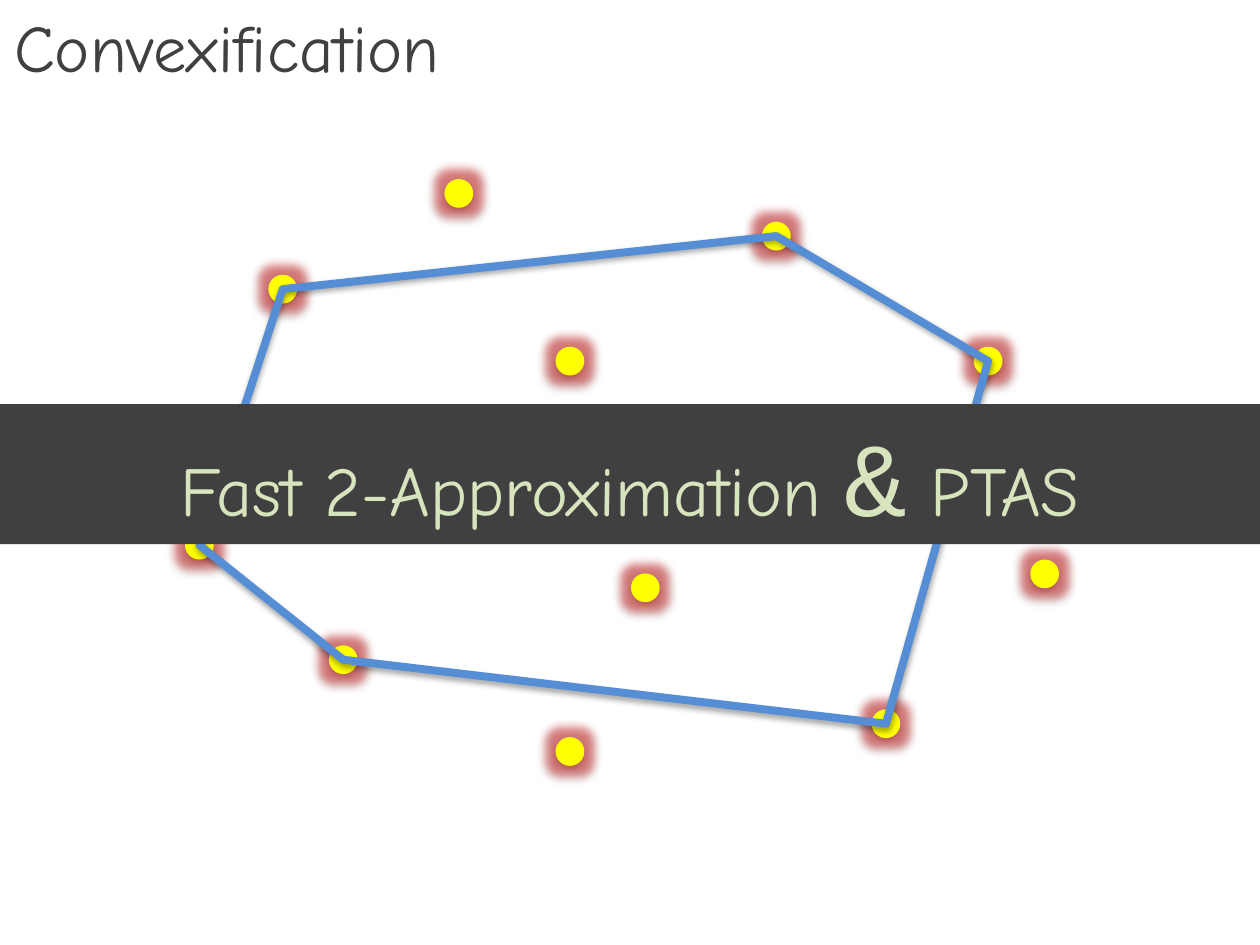
from lxml import etree
from pptx import Presentation
from pptx.dml.color import RGBColor
from pptx.enum.shapes import MSO_SHAPE
from pptx.enum.text import MSO_ANCHOR, MSO_AUTO_SIZE, PP_ALIGN
from pptx.oxml.ns import qn
from pptx.util import Cm, Pt

OVAL, RECTANGLE = MSO_SHAPE.OVAL, MSO_SHAPE.RECTANGLE
TOP, MIDDLE = MSO_ANCHOR.TOP, MSO_ANCHOR.MIDDLE
LEFT, CENTER = PP_ALIGN.LEFT, PP_ALIGN.CENTER
GROW = MSO_AUTO_SIZE.SHAPE_TO_FIT_TEXT
TITLE_ONLY = 5

FONT = "Comic Neue"
DOT_SIZE = 0.58
HULL_DOTS = [(0, 7.09), (1.68, 1.93), (11.63, 0.86),
             (15.9, 3.38), (13.84, 10.69), (2.9, 9.4)]
OTHER_DOTS = [(5.23, 0), (17.04, 7.67), (8.99, 7.95), (7.47, 11.25), (7.47, 3.38),
              (12.22, 4.95), (3.45, 5.54), (5.66, 5.54), (10.26, 5.54)]


def colour(hex_text):
    """Return the colour for a hex string."""
    return RGBColor.from_string(hex_text)


def add_effect(shape, name, hex_text, opacity, **settings):
    """Append a coloured effect to the shape's effect list."""
    effects = shape._element.spPr.find(qn("a:effectLst"))
    effect = etree.SubElement(effects, qn(f"a:{name}"),
                              {key: str(value) for key, value in settings.items()})
    tint = etree.SubElement(effect, qn("a:srgbClr"), val=hex_text)
    etree.SubElement(tint, qn("a:alpha"), val=str(opacity * 1000))


def add_drop_shadow(shape):
    """Give the shape a soft shadow straight below it."""
    add_effect(shape, "outerShdw", "000000", 35, blurRad=Pt(3.1), dist=Pt(1.8),
               dir=90 * 60000, rotWithShape=0)


def set_title(page, left, top, width, height):
    """Place and format the slide title."""
    title = page.shapes.title
    title.left, title.top, title.width, title.height = map(Cm, (left, top, width, height))
    frame = title.text_frame
    frame.text = "Convexification"
    frame.word_wrap = False
    frame.auto_size = GROW
    frame.vertical_anchor = TOP
    para = frame.paragraphs[0]
    para.alignment = LEFT
    para.font.name, para.font.size = FONT, Pt(38)
    para.font.color.rgb = colour("404040")


def add_dot(page, left, top):
    """Draw one glowing point."""
    dot = page.shapes.add_shape(OVAL, Cm(left), Cm(top), Cm(DOT_SIZE), Cm(DOT_SIZE))
    dot.shadow.inherit = False
    dot.fill.solid()
    dot.fill.fore_color.rgb = colour("FFFF00")
    dot.line.fill.background()
    add_effect(dot, "glow", "C80000", 45, rad=Pt(11))
    add_drop_shadow(dot)


def add_hull_diagram(page, left, top):
    """Draw the points and the polygon through the centres of the hull points."""
    for x, y in HULL_DOTS + OTHER_DOTS:
        add_dot(page, left + x, top + y)
    centres = [(Cm(left + x + DOT_SIZE / 2), Cm(top + y + DOT_SIZE / 2))
               for x, y in HULL_DOTS]
    builder = page.shapes.build_freeform(*centres[0])
    builder.add_line_segments(centres[1:], close=True)
    hull = builder.convert_to_shape()
    hull.shadow.inherit = False
    hull.fill.background()
    hull.line.color.rgb = colour("558ED5")
    hull.line.width = Pt(4.5)
    add_drop_shadow(hull)


def add_banner(page, left, top, width, height):
    """Lay the message band across the diagram."""
    banner = page.shapes.add_shape(RECTANGLE, *map(Cm, (left, top, width, height)))
    banner.shadow.inherit = False
    banner.fill.solid()
    banner.fill.fore_color.rgb = colour("404040")
    banner.line.fill.background()
    frame = banner.text_frame
    frame.word_wrap = True
    frame.auto_size = GROW
    frame.vertical_anchor = MIDDLE
    para = frame.paragraphs[0]
    para.alignment = CENTER
    for text, font, size in [("Fast 2-Approximation ", FONT, 40),
                             ("&", "Courier New", 60), (" PTAS", FONT, 40)]:
        span = para.add_run()
        span.text = text
        span.font.name, span.font.size = font, Pt(size)
        span.font.color.rgb = colour("D7E4BD")


def main():
    """Build and save the deck."""
    deck = Presentation()
    deck.slide_width, deck.slide_height = Cm(25.4), Cm(19.05)
    page = deck.slides.add_slide(deck.slide_layouts[TITLE_ONLY])
    set_title(page, 0.03, 0, 9.7, 1.88)
    add_hull_diagram(page, 3.73, 3.61)
    add_banner(page, 0, 8.15, 25.4, 2.82)
    deck.save("out.pptx")


if __name__ == "__main__":
    main()
